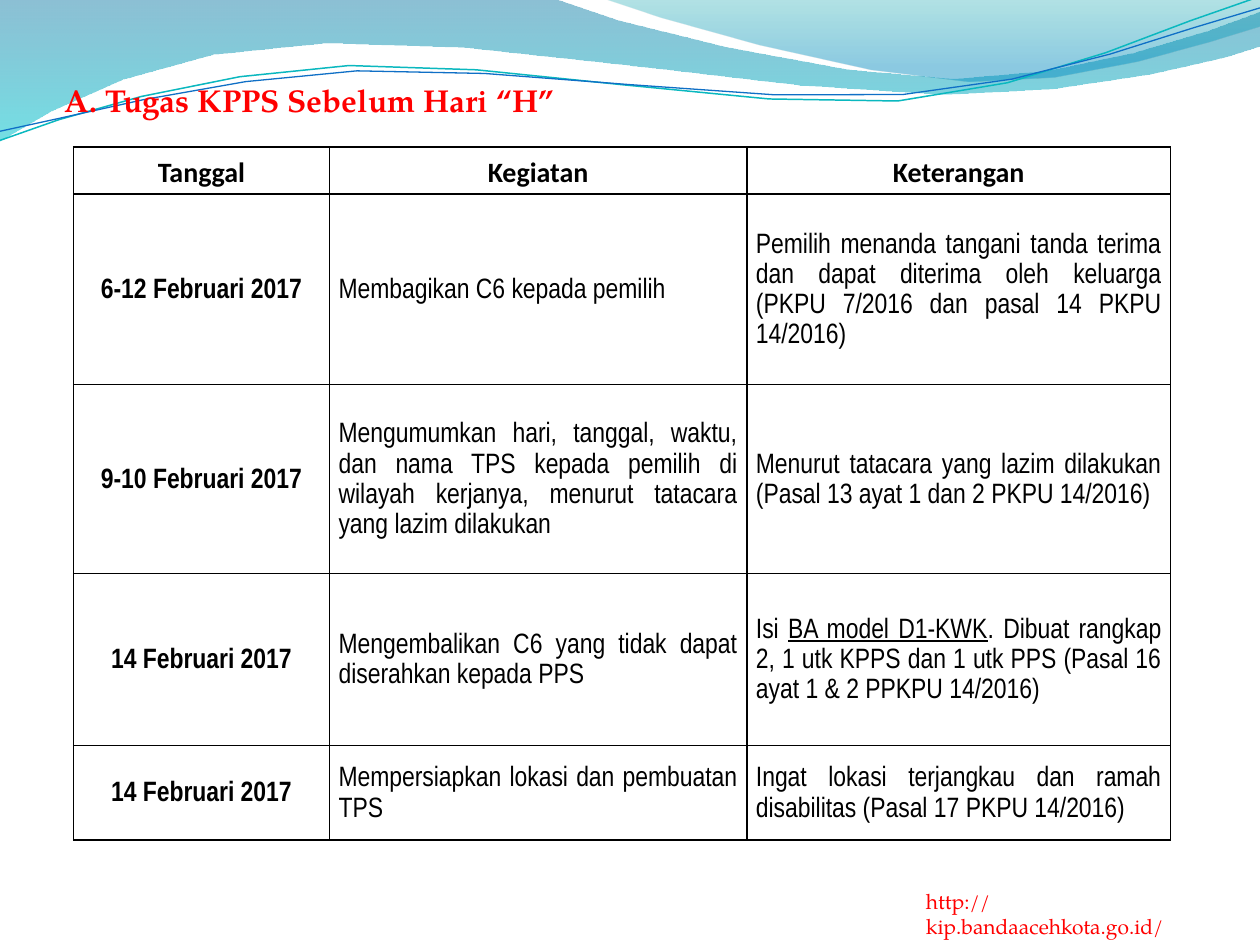
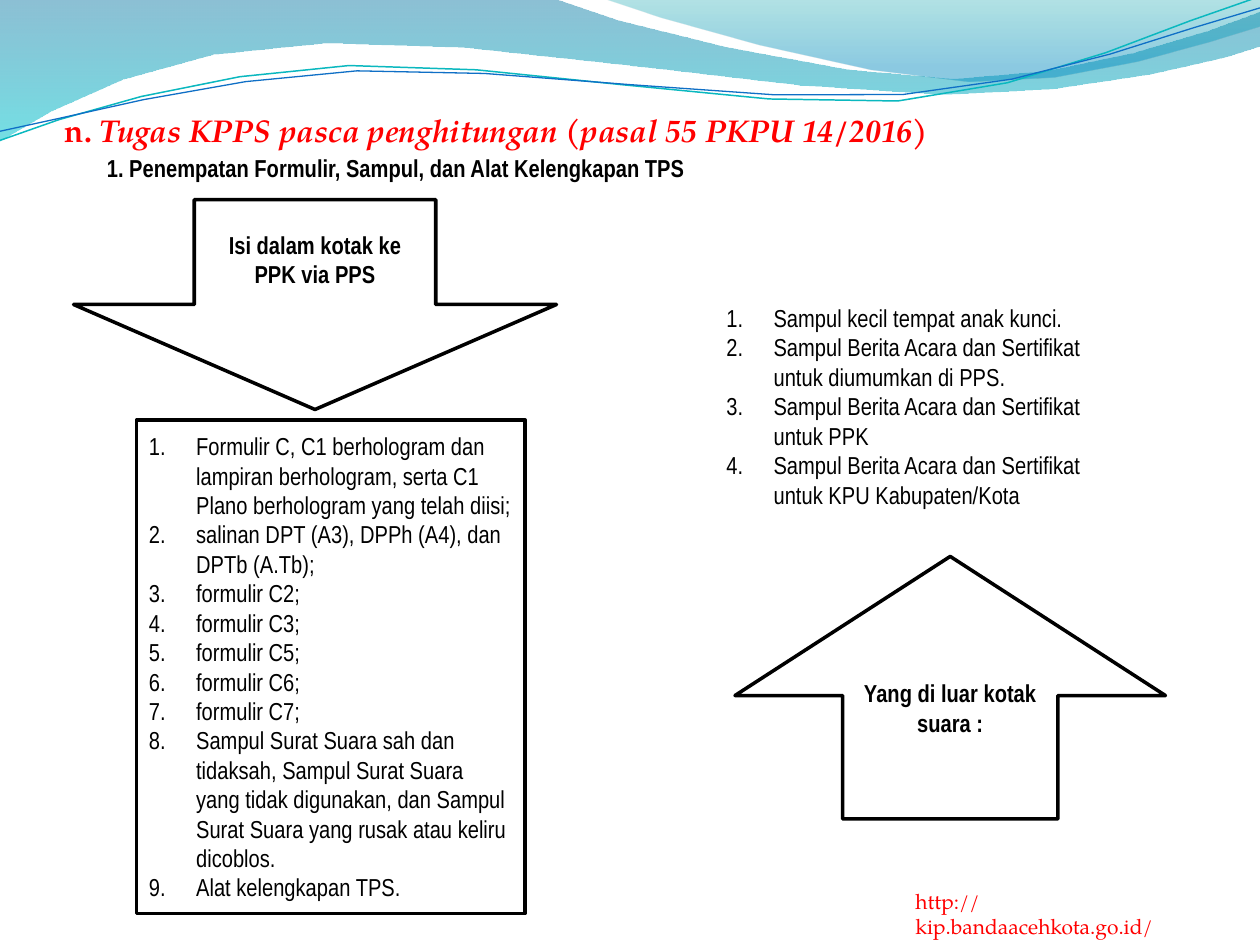
from dataclasses import dataclass

from lxml import etree
from pptx import Presentation
from pptx import util as u
from pptx.dml.color import RGBColor
from pptx.enum import shapes, text
from pptx.oxml.ns import qn

SCALE = 9525  # EMU per px, 96 px to the inch
CURVE_STEPS = 4
LEFT, CENTER, JUSTIFY = text.PP_ALIGN.LEFT, text.PP_ALIGN.CENTER, text.PP_ALIGN.JUSTIFY


@dataclass(frozen=True)
class Theme:
    ink: str = "000000"
    paper: str = "FFFFFF"
    accent: str = "FF0000"
    teal: str = "0AB8BF"
    blue: str = "0F6FC6"
    serif: str = "TeX Gyre Pagella"
    narrow: str = "Arial Narrow"
    header: str = "Calibri"
    title_size: int = 18
    table_size: int = 16
    body_size: int = 14
    url_size: int = 12
    outline: int = 2
    border: int = 1


T = Theme()

# Wave outlines: start point, then line ends (2 numbers) or curves (6 numbers)
BAND = [(0, 0), (422, -1), (457, 16, 637, 60, 728, 60), (819, 60, 920, 25, 960, 9),
        (961, 35), (944, 42, 835, 73, 716, 72), (596, 72, 367, 27, 247, 33),
        (124, 35, 44, 80, -1, 108)]
CREST = [(460, -1), (489, 11, 655, 60, 738, 62), (822, 66, 923, 31, 960, 20), (960, 0)]
TEAL_LINE = [(0, 107), (46, 89, 152, 55, 266, 50), (379, 45, 569, 85, 684, 77),
             (800, 68, 900, 14, 958, -2)]
BLUE_LINE = [(0, 100), (45, 92, 157, 59, 272, 54), (387, 49, 573, 81, 688, 72),
             (803, 64, 903, 20, 960, 6)]

SCHEDULE = [
    ("6-12 Februari 2017", "Membagikan C6 kepada pemilih",
     "Pemilih menanda tangani tanda terima dan dapat diterima oleh keluarga "
     "(PKPU 7/2016 dan pasal 14 PKPU 14/2016)"),
    ("9-10 Februari 2017",
     "Mengumumkan hari, tanggal, waktu, dan nama TPS kepada pemilih di wilayah "
     "kerjanya, menurut tatacara yang lazim dilakukan",
     "Menurut tatacara yang lazim dilakukan (Pasal 13 ayat 1 dan 2 PKPU 14/2016)"),
    ("14 Februari 2017", "Mengembalikan C6 yang tidak dapat diserahkan kepada PPS",
     [("Isi ", None), ("BA model D1-KWK", "underline"),
      (". Dibuat rangkap 2, 1 utk KPPS dan 1 utk PPS (Pasal 16 ayat 1 & 2 PPKPU 14/2016)",
       None)]),
    ("14 Februari 2017", "Mempersiapkan lokasi dan pembuatan TPS",
     "Ingat lokasi terjangkau dan ramah disabilitas (Pasal 17 PKPU 14/2016)"),
]

INSIDE_BOX = [
    "Formulir C, C1 berhologram dan lampiran berhologram, serta C1 Plano berhologram "
    "yang telah diisi;",
    "salinan DPT (A3), DPPh (A4), dan DPTb (A.Tb);",
    *[f"formulir {form};" for form in ("C2", "C3", "C5", "C6", "C7")],
    "Sampul Surat Suara sah dan tidaksah, Sampul Surat Suara yang tidak digunakan, "
    "dan Sampul Surat Suara yang rusak atau keliru dicoblos.",
    "Alat kelengkapan TPS.",
]
OUTSIDE_BOX = [
    "Sampul kecil tempat anak kunci.",
    *[f"Sampul Berita Acara dan Sertifikat untuk {goal}"
      for goal in ("diumumkan di PPS.", "PPK", "KPU Kabupaten/Kota")],
]


def px(n):
    return u.Emu(round(n * SCALE))


def rgb(color):
    return RGBColor.from_string(color)


# --- Text ---
def write(p, content, font, size, color=T.ink, bold=False, align=LEFT):
    """Fill a paragraph with a string or a list of (text, emphasis) runs."""
    p.alignment = align
    for words, emphasis in [(content, None)] if isinstance(content, str) else content:
        r = p.add_run()
        r.text = words
        if emphasis:
            setattr(r.font, emphasis, True)
    for f in (p.font, *(r.font for r in p.runs)):
        f.name, f.size, f.bold = font, u.Pt(size), bold
        f.color.rgb = rgb(color)


def add_text(s, box, content, font, size, **style):
    tf = s.shapes.add_textbox(*map(px, box)).text_frame
    tf.word_wrap = True
    write(tf.paragraphs[0], content, font, size, **style)


def number(p):
    pPr = p._p.get_or_add_pPr()
    pPr.set("marL", str(px(36)))
    pPr.set("indent", str(-px(36)))
    bullet = etree.Element(qn("a:buAutoNum"), type="arabicPeriod")
    pPr.insert(0, bullet)


# --- Shapes ---
def add_panel(s, kind, box, outlined=True, pad_bottom=5):
    sp = s.shapes.add_shape(kind, *map(px, box))
    sp.shadow.inherit = False
    sp.fill.solid()
    sp.fill.fore_color.rgb = rgb(T.paper)
    if outlined:
        sp.line.color.rgb = rgb(T.ink)
        sp.line.width = u.Pt(T.outline)
    else:
        sp.line.fill.background()
    tf = sp.text_frame
    tf.word_wrap = True
    tf.vertical_anchor = text.MSO_ANCHOR.MIDDLE
    tf.margin_bottom = px(pad_bottom)
    return sp


def add_arrow(s, kind, box, label, pad_bottom):
    sp = add_panel(s, kind, box, pad_bottom=pad_bottom)
    write(sp.text_frame.paragraphs[0], label, T.narrow, T.body_size, bold=True, align=CENTER)
    return sp


def add_numbered_list(s, box, items, **panel):
    tf = add_panel(s, shapes.MSO_SHAPE.RECTANGLE, box, **panel).text_frame
    for i, item in enumerate(items):
        p = tf.add_paragraph() if i else tf.paragraphs[0]
        write(p, item, T.narrow, T.body_size)
        number(p)


# --- Waves ---
def trace(outline):
    """Turn lines and cubic curves into a short list of points."""
    points = [outline[0]]
    for seg in outline[1:]:
        if len(seg) == 2:
            points.append(seg)
            continue
        ctrl = [points[-1], seg[:2], seg[2:4], seg[4:]]
        for k in range(1, CURVE_STEPS + 1):
            t = k / CURVE_STEPS
            w = ((1 - t) ** 3, 3 * t * (1 - t) ** 2, 3 * t * t * (1 - t), t ** 3)
            points.append(tuple(sum(a * c[axis] for a, c in zip(w, ctrl)) for axis in (0, 1)))
    return points


def add_outline(s, outline, close):
    points = [(px(x), px(y)) for x, y in trace(outline)]
    fb = s.shapes.build_freeform(*points[0], scale=1.0)
    fb.add_line_segments(points[1:], close=close)
    sp = fb.convert_to_shape()
    sp.shadow.inherit = False
    return sp


def add_wave(s, outline, stops):
    """Closed wave with (position, colour, opacity %) stops from top to bottom."""
    sp = add_outline(s, outline, True)
    sp.line.fill.background()
    sp.fill.gradient()
    sp.fill.gradient_angle = 270
    for stop, (position, color, _) in zip(sp.fill.gradient_stops, stops):
        stop.position = position
        stop.color.rgb = rgb(color)
    for clr, (_, _, opacity) in zip(sp._element.spPr.iter(qn("a:srgbClr")), stops):
        etree.SubElement(clr, qn("a:alpha"), val=str(opacity * 1000))


def add_wave_line(s, outline, color, width):
    sp = add_outline(s, outline, False)
    sp.fill.background()
    sp.line.color.rgb = rgb(color)
    sp.line.width = u.Pt(width)


# --- Table ---
def style_cell(cell):
    cell.fill.background()
    cell.vertical_anchor = text.MSO_ANCHOR.MIDDLE
    cell.margin_left = cell.margin_right = px(7)
    cell.margin_top = cell.margin_bottom = 0
    tcPr = cell._tc.get_or_add_tcPr()
    for i, side in enumerate(("lnL", "lnR", "lnT", "lnB")):
        ln = etree.Element(qn(f"a:{side}"), w=str(u.Pt(T.border)))
        fill = etree.SubElement(ln, qn("a:solidFill"))
        etree.SubElement(fill, qn("a:srgbClr"), val=T.ink)
        tcPr.insert(i, ln)


def add_schedule(s, left, top, widths, heights, header, rows):
    frame = s.shapes.add_table(len(heights), len(widths), px(left), px(top),
                               px(sum(widths)), px(sum(heights)))
    table = frame.table
    table.first_row = table.horz_banding = False
    for col, width in zip(table.columns, widths):
        col.width = px(width)
    for row, height in zip(table.rows, heights):
        row.height = px(height)
    for i, row in enumerate([header, *rows]):
        for j, content in enumerate(row):
            cell = table.cell(i, j)
            style_cell(cell)
            key = i == 0 or j == 0
            p = cell.text_frame.paragraphs[0]
            p.line_spacing = 1.15
            write(p, content, T.narrow if i else T.header, T.table_size,
                  bold=key, align=CENTER if key else JUSTIFY)


# --- Shared slide parts ---
def new_slide(prs, title, title_box):
    s = prs.slides.add_slide(prs.slide_layouts[6])
    add_wave(s, BAND, [(0, "0074A1", 45), (1, "00C6CF", 55)])
    add_wave(s, CREST, [(0, "00A1A9", 30), (0.8, "008BBF", 45)])
    add_wave_line(s, TEAL_LINE, T.teal, 0.85)
    add_wave_line(s, BLUE_LINE, T.blue, 0.75)
    add_text(s, title_box, title, T.serif, T.title_size, color=T.accent, bold=True)
    return s


def add_url(s, left):
    add_text(s, (left, 672, 242, 29), "http://kip.bandaacehkota.go.id/",
             T.serif, T.url_size, color=T.accent)


def schedule_slide(prs):
    s = new_slide(prs, "A. Tugas KPPS Sebelum Hari “H”", (40, 57, 576, 38))
    add_url(s, 696)
    add_schedule(s, 56, 112, (195, 318, 323), (36, 145, 144, 131, 72),
                 ("Tanggal", "Kegiatan", "Keterangan"), SCHEDULE)


def placement_slide(prs):
    title = [("n. ", None),
             ("Tugas KPPS pasca penghitungan (pasal 55 PKPU 14/2016)", "italic")]
    s = new_slide(prs, title, (40, 80, 808, 38))
    add_text(s, (72, 112, 480, 33), "1. Penempatan Formulir, Sampul, dan Alat Kelengkapan TPS",
             T.narrow, T.body_size, bold=True)
    # Contents of the ballot box
    add_arrow(s, shapes.MSO_SHAPE.DOWN_ARROW, (56, 152, 368, 160),
              "Isi dalam kotak ke PPK via PPS", 34)
    add_numbered_list(s, (104, 320, 296, 376), INSIDE_BOX)
    # Items kept outside it
    add_numbered_list(s, (544, 144, 296, 376), OUTSIDE_BOX, outlined=False, pad_bottom=50)
    up = add_arrow(s, shapes.MSO_SHAPE.UP_ARROW, (560, 424, 328, 200),
                   "Yang di luar kotak suara :", 27)
    up.adjustments[1] = 0.53
    add_url(s, 688)


def main():
    prs = Presentation()
    prs.slide_width, prs.slide_height = px(960), px(720)
    schedule_slide(prs)
    placement_slide(prs)
    prs.save("out.pptx")


if __name__ == "__main__":
    main()
